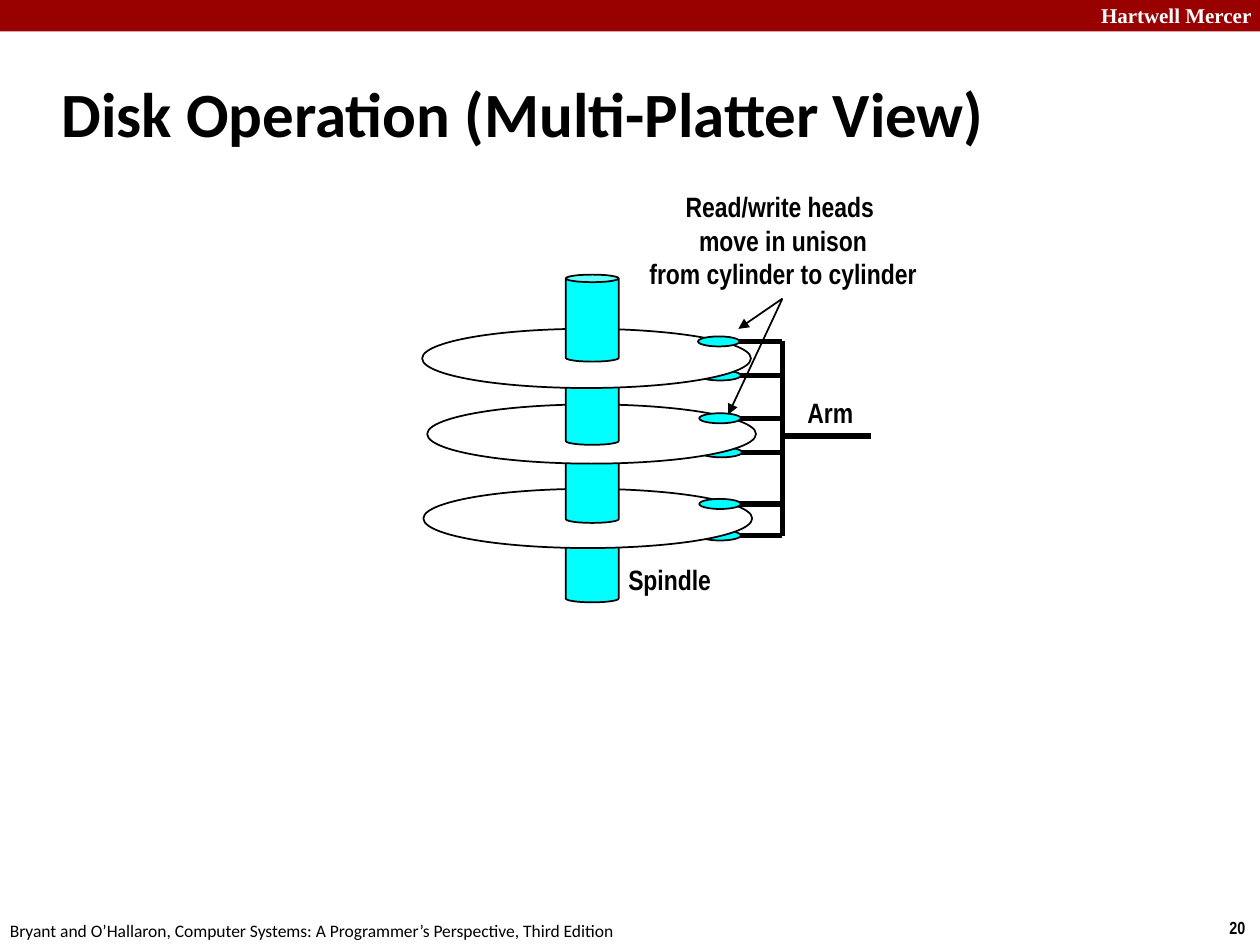
from dataclasses import dataclass

from lxml import etree
from pptx import Presentation
from pptx.dml.color import RGBColor
from pptx.enum.shapes import MSO_CONNECTOR, MSO_SHAPE
from pptx.enum.text import MSO_ANCHOR, MSO_AUTO_SIZE, PP_ALIGN
from pptx.oxml.ns import qn
from pptx.util import Inches, Pt

RECT, OVAL, CAN = MSO_SHAPE.RECTANGLE, MSO_SHAPE.OVAL, MSO_SHAPE.CAN
STRAIGHT = MSO_CONNECTOR.STRAIGHT
LEFT, CENTER = PP_ALIGN.LEFT, PP_ALIGN.CENTER
TOP, MIDDLE = MSO_ANCHOR.TOP, MSO_ANCHOR.MIDDLE


@dataclass(frozen=True)
class Theme:
    black: RGBColor = RGBColor(0, 0, 0)
    white: RGBColor = RGBColor(255, 255, 255)
    red: RGBColor = RGBColor(0x99, 0, 0)
    cyan: RGBColor = RGBColor(0, 255, 255)
    body_font: str = "Calibri"
    label_font: str = "Arial Narrow"
    brand_font: str = "Times New Roman"
    title_size: Pt = Pt(36)
    label_size: Pt = Pt(16)
    brand_size: Pt = Pt(12)
    footer_size: Pt = Pt(10)
    thin: Pt = Pt(1)
    thick: Pt = Pt(3)


T = Theme()
prs = Presentation()
prs.slide_width, prs.slide_height = Inches(10), Inches(7.5)
s = prs.slides.add_slide(prs.slide_layouts[5])


def add_solid(kind, x, y, w, h, fill):
    sp = s.shapes.add_shape(kind, Inches(x), Inches(y), Inches(w), Inches(h))
    sp.shadow.inherit = False
    sp.fill.solid()
    sp.fill.fore_color.rgb = fill
    sp.line.color.rgb = T.black
    sp.line.width = T.thin
    if kind == CAN:
        sp.adjustments[0] = 0.142
    return sp


def add_line(x1, y1, x2, y2, width, arrow=False):
    ln = s.shapes.add_connector(STRAIGHT, Inches(x1), Inches(y1), Inches(x2), Inches(y2))
    ln.line.color.rgb = T.black
    ln.line.width = width
    if arrow:
        etree.SubElement(ln.line._get_or_add_ln(), qn("a:tailEnd"), type="triangle")
    etree.SubElement(ln._element.spPr, qn("a:effectLst"))


# Header bar
bar = add_solid(RECT, 0, 0, 10, 0.25, T.red)
bar.line.fill.background()

# Title
title = s.shapes.title
title.left, title.top = Inches(0.39), Inches(0.48)
title.width, title.height = Inches(8.3), Inches(0.83)
tf = title.text_frame
tf.auto_size = MSO_AUTO_SIZE.NONE
tf.vertical_anchor = MIDDLE
p = tf.paragraphs[0]
p.alignment = LEFT
pPr = p._p.get_or_add_pPr()
pPr.set("marL", str(Inches(0.13)))
pPr.set("indent", str(-Inches(0.13)))
r = p.add_run()
r.text = "Disk Operation (Multi-Platter View)"
r.font.name, r.font.size, r.font.bold = T.body_font, T.title_size, True
r.font.color.rgb = T.black

# Platters from bottom to top: platter left, top, spindle top, lower head, upper head
# (heads are given as left edge and centre line)
arm_x, arm_tip, head_h = 6.21, 5.71, 0.08
spindle_x, spindle_w, spindle_h = 4.49, 0.42, 0.69
platters = [
    (3.36, 3.88, 4.09, (5.55, 4.25), (5.55, 4.0)),
    (3.39, 3.21, 3.46, (5.56, 3.59), (5.55, 3.32)),
    (3.35, 2.61, 2.84, (5.55, 2.98), (5.54, 2.71)),
]
for x, y, spindle_y, lower, upper in platters:
    for head_x, head_y in (lower, upper):
        if (head_x, head_y) == upper:
            # The spindle and platter hide part of the lower head only
            add_solid(CAN, spindle_x, spindle_y, spindle_w, spindle_h, T.cyan)
            add_solid(OVAL, x, y, 2.61, 0.47, T.white)
        add_line(arm_x, head_y, arm_tip, head_y, T.thick)
        add_solid(OVAL, head_x, head_y - head_h / 2, 0.33, head_h, T.cyan)
add_solid(CAN, spindle_x, 2.18, spindle_w, spindle_h, T.cyan)

# Arm
add_line(arm_x, 2.71, arm_x, 4.25, T.thick)
add_line(arm_x, 3.46, 6.91, 3.46, T.thick)

# Arrows from the caption to the heads
for x, y in ((5.86, 2.61), (5.78, 3.29)):
    add_line(arm_x, 2.37, x, y, T.thin, arrow=True)

# Labels, header and footer text
label = (T.label_font, T.label_size, True, T.black)
texts = [
    (8.64, -0.03, 1.43, 0.3, ["Hartwell Mercer"], LEFT, TOP, True,
     (T.brand_font, T.brand_size, True, T.white)),
    (9.66, 7.23, 0.34, 0.27, ["20"], LEFT, TOP, False,
     (T.label_font, T.footer_size, True, T.black)),
    (-0.02, 7.25, 5.08, 0.27,
     ["Bryant and O’Hallaron, Computer Systems: A Programmer’s Perspective, Third Edition"],
     LEFT, TOP, False, (T.body_font, T.footer_size, False, T.black)),
    (6.31, 3.09, 0.57, 0.37, ["Arm"], LEFT, MIDDLE, False, label),
    (5.01, 1.45, 2.41, 0.91,
     ["Read/write heads ", "move in unison", "from cylinder to cylinder"],
     CENTER, MIDDLE, True, label),
    (4.88, 4.41, 0.87, 0.37, ["Spindle"], CENTER, MIDDLE, False, label),
]
for x, y, w, h, lines, align, anchor, wrap, (font, size, bold, color) in texts:
    tf = s.shapes.add_textbox(Inches(x), Inches(y), Inches(w), Inches(h)).text_frame
    tf.word_wrap = wrap
    tf.vertical_anchor = anchor
    for i, line in enumerate(lines):
        p = tf.add_paragraph() if i else tf.paragraphs[0]
        p.alignment = align
        r = p.add_run()
        r.text = line
        r.font.name, r.font.size, r.font.bold = font, size, bold
        r.font.color.rgb = color

prs.save("out.pptx")
